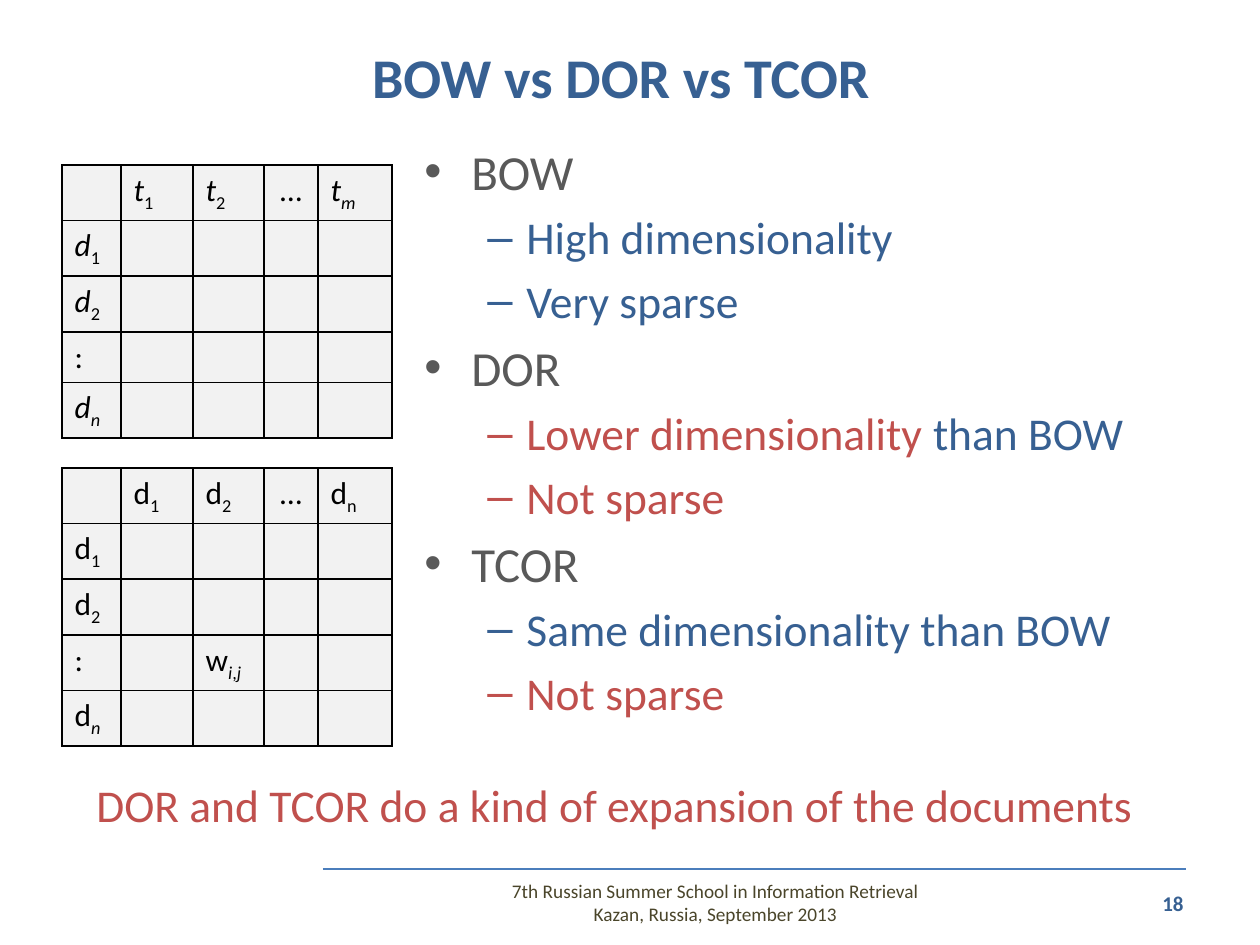
import pptx
import pptx.util
import pptx.dml.color
import pptx.enum.shapes
import pptx.enum.text
import pptx.oxml.ns
import lxml.etree

PX = 914400 // 126
FONT = "Calibri"
BLUE, RED, GREY, BROWN, BLACK = "376092", "C0504D", "595959", "4A452A", "000000"
RULE_BLUE, CELL_GREY = "4B7EBC", "F2F2F2"
ALIGN = pptx.enum.text.PP_ALIGN
MIDDLE = pptx.enum.text.MSO_ANCHOR.MIDDLE

# Outline: (level, [(text, colour), ...])
OUTLINE = [
    (0, [("BOW", GREY)]),
    (1, [("High dimensionality", BLUE)]),
    (1, [("Very sparse", BLUE)]),
    (0, [("DOR", GREY)]),
    (1, [("Lower dimensionality ", RED), ("than BOW", BLUE)]),
    (1, [("Not sparse", RED)]),
    (0, [("TCOR", GREY)]),
    (1, [("Same dimensionality than BOW", BLUE)]),
    (1, [("Not sparse", RED)]),
]
# Per level: bullet, size in points, left margin and hanging indent in px
LEVELS = [("•", 28, 47, 47), ("–", 26, 102, 39)]

# Cells by (row, column): [(text, style), ...], where i is italic and s subscript
DOCUMENT_TERM = {
    (0, 1): [("t", "i"), ("1", "s")],
    (0, 2): [("t", "i"), ("2", "s")],
    (0, 3): [("…", "")],
    (0, 4): [("t", "i"), ("m", "is")],
    (1, 0): [("d", "i"), ("1", "s")],
    (2, 0): [("d", "i"), ("2", "s")],
    (3, 0): [(":", "")],
    (4, 0): [("d", "i"), ("n", "is")],
}
DOCUMENT_DOCUMENT = {
    (0, 1): [("d", ""), ("1", "s")],
    (0, 2): [("d", ""), ("2", "s")],
    (0, 3): [("…", "")],
    (0, 4): [("d", ""), ("n", "s")],
    (1, 0): [("d", ""), ("1", "s")],
    (2, 0): [("d", ""), ("2", "s")],
    (3, 0): [(":", "")],
    (3, 2): [("w", ""), ("i", "is"), (",", "s"), ("j", "is")],
    (4, 0): [("d", ""), ("n", "is")],
}
TABLES = [(165, DOCUMENT_TERM), (468, DOCUMENT_DOCUMENT)]
TABLE_LEFT, COLUMN_WIDTHS, ROW_COUNT, ROW_HEIGHT = 62, [59, 72, 71, 54, 74], 5, 47

# Text boxes: text, (left, top, width, height), size, colour, bold, align, wrap
TEXTS = [
    ("BOW vs DOR vs TCOR", (54, 28, 1134, 97), 32, BLUE, True, ALIGN.CENTER, True),
    ("7th Russian Summer School in Information Retrieval\vKazan, Russia, September 2013",
     (483, 877, 465, 50), 11, BROWN, False, ALIGN.CENTER, True),
    ("18", (1101, 878, 95, 50), 12, BLUE, True, ALIGN.RIGHT, True),
    ("DOR and TCOR do a kind of expansion of the documents",
     (84, 770, 1084, 68), 26, RED, False, ALIGN.LEFT, False),
]


def rgb(colour):
    return pptx.dml.color.RGBColor.from_string(colour)


def add_child(parent, tag, **attributes):
    child = lxml.etree.SubElement(parent, pptx.oxml.ns.qn(tag))
    for name, value in attributes.items():
        child.set(name, str(value))
    return child


def set_font(font, size, colour=None, bold=False):
    font.name, font.size, font.bold = FONT, pptx.util.Pt(size), bold
    if colour:
        font.color.rgb = rgb(colour)


def add_box(slide, place, wrap=True):
    box = slide.shapes.add_textbox(*(value * PX for value in place))
    box.text_frame.word_wrap = wrap
    return box.text_frame


def add_text(slide, text, place, size, colour, bold, align, wrap):
    frame = add_box(slide, place, wrap)
    frame.vertical_anchor = MIDDLE
    para = frame.paragraphs[0]
    para.text, para.alignment = text, align
    set_font(para.font, size, colour, bold)


def add_outline(slide, place):
    frame = add_box(slide, place)
    for index, (level, spans) in enumerate(OUTLINE):
        bullet, size, margin, hanging = LEVELS[level]
        para = frame.add_paragraph() if index else frame.paragraphs[0]
        para.level = level
        para.space_before = pptx.util.Pt(size * 0.2)
        set_font(para.font, size)
        for text, colour in spans:
            span = para.add_run()
            span.text = text
            span.font.color.rgb = rgb(colour)
        properties = para._p.get_or_add_pPr()
        properties.set("marL", str(margin * PX))
        properties.set("indent", str(-hanging * PX))
        bullet_font = add_child(properties, "a:buFont", typeface="Arial")
        bullet_font.addnext(add_child(properties, "a:buChar", char=bullet))
        # Default run properties come after the bullet in the schema
        properties.append(properties.find(pptx.oxml.ns.qn("a:defRPr")))


def style_cell(cell):
    """Give the cell 1 pt black borders and a grey fill."""
    properties = cell._tc.get_or_add_tcPr()
    for side in ("a:lnL", "a:lnR", "a:lnT", "a:lnB"):
        line = add_child(properties, side, w=pptx.util.Pt(1))
        add_child(add_child(line, "a:solidFill"), "a:srgbClr", val=BLACK)
    cell.fill.solid()
    cell.fill.fore_color.rgb = rgb(CELL_GREY)


def fill_cell(cell, spans):
    para = cell.text_frame.paragraphs[0]
    set_font(para.font, 18, BLACK)
    if spans == [("…", "")]:
        para.alignment = ALIGN.CENTER
    for text, style in spans:
        span = para.add_run()
        span.text = text
        set_font(span.font, 18, BLACK)
        span.font.italic = "i" in style
        if "s" in style:
            span._r.get_or_add_rPr().set("baseline", "-25000")


def add_matrix(slide, top, cells):
    table = slide.shapes.add_table(
        ROW_COUNT, len(COLUMN_WIDTHS), TABLE_LEFT * PX, top * PX,
        sum(COLUMN_WIDTHS) * PX, ROW_COUNT * ROW_HEIGHT * PX).table
    table.first_row = table.horz_banding = False
    for column, width in zip(table.columns, COLUMN_WIDTHS):
        column.width = width * PX
    for row in range(ROW_COUNT):
        for column in range(len(COLUMN_WIDTHS)):
            cell = table.cell(row, column)
            style_cell(cell)
            fill_cell(cell, cells.get((row, column), []))


def add_footer_rule(slide, left, right, y):
    rule = slide.shapes.add_connector(
        pptx.enum.shapes.MSO_CONNECTOR.STRAIGHT, left * PX, y * PX, right * PX, y * PX)
    rule.line.color.rgb = rgb(RULE_BLUE)
    rule.line.width = pptx.util.Pt(1.5)
    add_child(rule._element.spPr, "a:effectLst")


def main():
    deck = pptx.Presentation()
    deck.slide_width, deck.slide_height = pptx.util.Inches(10), pptx.util.Inches(7.5)
    slide = deck.slides.add_slide(deck.slide_layouts[6])
    add_footer_rule(slide, 323, 1186, 869)
    add_outline(slide, (412, 135, 804, 625))
    for top, cells in TABLES:
        add_matrix(slide, top, cells)
    for text in TEXTS:
        add_text(slide, *text)
    deck.save("out.pptx")


if __name__ == "__main__":
    main()
